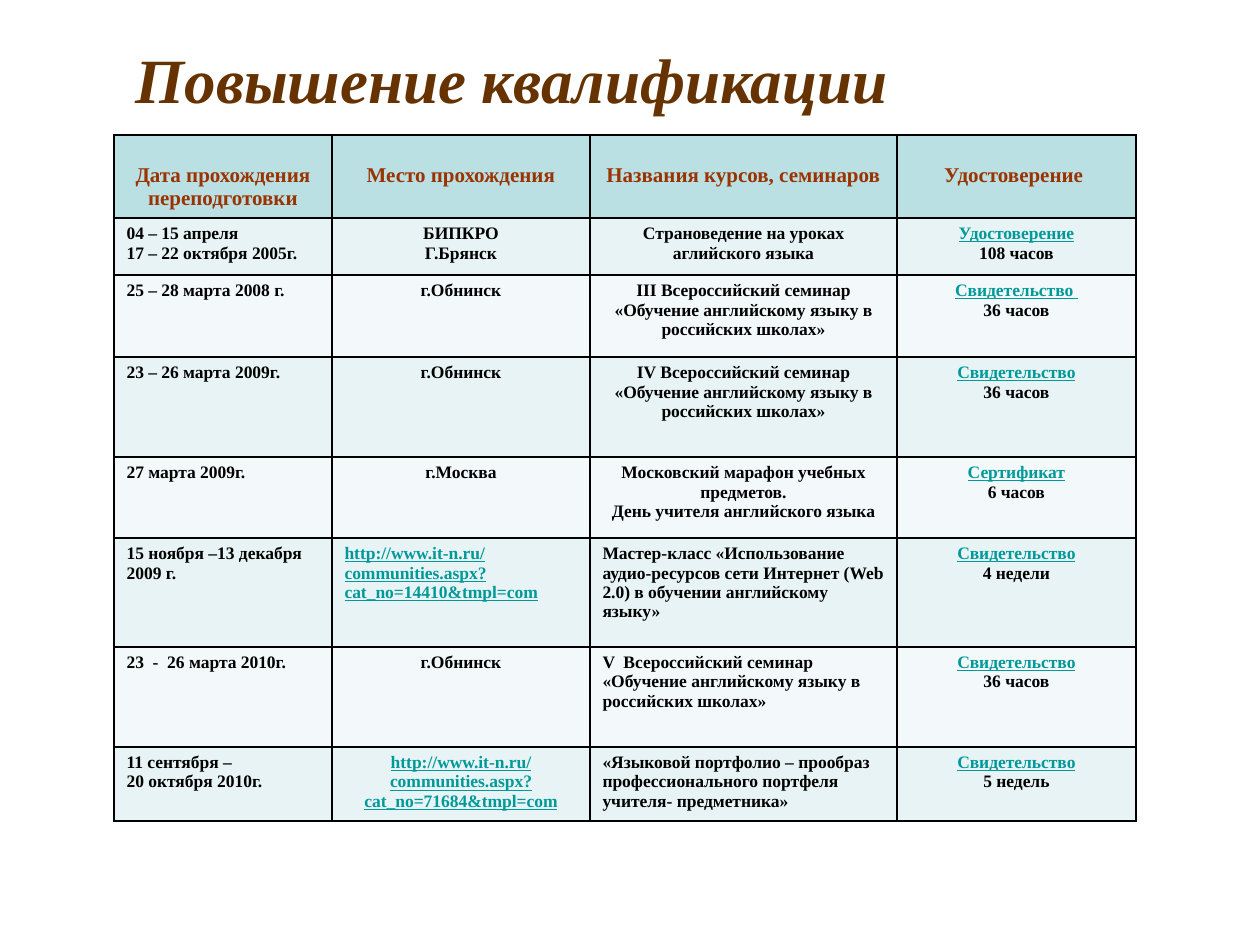
from lxml import etree
from pptx import Presentation
from pptx.dml.color import RGBColor
from pptx.enum import text
from pptx.oxml import ns
from pptx.util import Emu, Pt

PX = 914400 / 126
FONT = "Times New Roman"
HUE = {"title": "663300", "head": "993300", "ink": "000000", "link": "009999",
       "top": "BBE0E3", "odd": "E7F3F4", "even": "F3F9FA"}
LEFT, MID = text.PP_ALIGN.LEFT, text.PP_ALIGN.CENTER

COLS = [218, 258, 307, 239]
ROWS = [83, 57, 82, 100, 81, 109, 100, 74]
HEADS = ["Дата прохождения переподготовки", "Место прохождения",
         "Названия курсов, семинаров", "Удостоверение "]
CITY = "г.Обнинск"
SITE = "http://www.it-n.ru/communities.aspx?cat_no={}&tmpl=com"
TOPIC = "Всероссийский семинар «Обучение английскому языку в российских школах»"
PAPER = "Свидетельство"

# Dates, place, place alignment, course, course alignment, paper, length
DATA = [
    (["04 – 15 апреля", "17 – 22 октября 2005г."], ["БИПКРО", "Г.Брянск"], MID,
     ["Страноведение на уроках аглийского языка"], MID, "Удостоверение", "108 часов"),
    (["25 – 28 марта 2008 г."], [CITY], MID, ["III " + TOPIC], MID,
     PAPER + " ", "36 часов"),
    (["23 – 26 марта 2009г."], [CITY], MID, ["IV " + TOPIC], MID, PAPER, "36 часов"),
    (["27 марта 2009г."], ["г.Москва"], MID,
     ["Московский марафон учебных предметов.", "День учителя английского языка"], MID,
     "Сертификат", "6 часов"),
    (["15 ноября –13 декабря 2009 г."], [SITE.format(14410)], LEFT,
     ["Мастер-класс «Использование аудио-ресурсов сети Интернет (Web 2.0) "
      "в обучении английскому языку»"], LEFT, PAPER, "4 недели"),
    (["23  -  26 марта 2010г."], [CITY], MID, ["V  " + TOPIC], LEFT, PAPER, "36 часов"),
    (["11 сентября –", "20 октября 2010г."], [SITE.format(71684)], MID,
     ["«Языковой портфолио – прообраз профессионального портфеля "
      "учителя- предметника»"], LEFT, PAPER, "5 недель"),
]


def px(n):
    return Emu(round(n * PX))


def add_run(para, words, size, hue, line=False, slant=False):
    run = para.add_run()
    run.text = words
    font = run.font
    font.name, font.size, font.bold = FONT, Pt(size), True
    font.italic, font.underline = slant, line
    font.color.rgb = RGBColor.from_string(HUE[hue])


def add_edges(cell):
    props = cell._tc.get_or_add_tcPr()
    for side in ("lnL", "lnR", "lnT", "lnB"):
        line = etree.SubElement(props, ns.qn("a:" + side), w=str(Pt(1)))
        fill = etree.SubElement(line, ns.qn("a:solidFill"))
        etree.SubElement(fill, ns.qn("a:srgbClr"), val=HUE["ink"])


def fill_cell(cell, lines, align, size, back):
    """Write lines given as (words, hue) pairs; link lines are underlined."""
    add_edges(cell)
    cell.fill.solid()
    cell.fill.fore_color.rgb = RGBColor.from_string(HUE[back])
    frame = cell.text_frame
    for i, (words, hue) in enumerate(lines):
        para = frame.add_paragraph() if i else frame.paragraphs[0]
        para.alignment = align
        add_run(para, words, size, hue, line=hue == "link")


def tint(lines):
    return [(s, "link" if s.startswith("http") else "ink") for s in lines]


def add_title(slide, x, y, w, h):
    title = slide.shapes.title
    title.left, title.top, title.width, title.height = map(px, (x, y, w, h))
    frame = title.text_frame
    frame.word_wrap = True
    frame.auto_size = text.MSO_AUTO_SIZE.NONE
    frame.vertical_anchor = text.MSO_ANCHOR.MIDDLE
    para = frame.paragraphs[0]
    para.alignment = LEFT
    add_run(para, "Повышение квалификации", 36, "title", slant=True)


def add_grid(slide, x, y):
    box = map(px, (x, y, sum(COLS), sum(ROWS)))
    table = slide.shapes.add_table(len(ROWS), len(COLS), *box).table
    table.first_row = table.horz_banding = False
    for col, w in zip(table.columns, COLS):
        col.width = px(w)
    for row, h in zip(table.rows, ROWS):
        row.height = px(h)

    # Header row
    for c, words in enumerate(HEADS):
        cell = table.cell(0, c)
        fill_cell(cell, [(words, "head")], MID, 12, "top")
        cell.margin_top = px(29)

    # Course rows
    for r, (dates, place, pal, course, cal, paper, span) in enumerate(DATA, 1):
        parts = [(tint(dates), LEFT), (tint(place), pal), (tint(course), cal),
                 ([(paper, "link"), (span, "ink")], MID)]
        for c, (lines, align) in enumerate(parts):
            fill_cell(table.cell(r, c), lines, align, 10, "odd" if r % 2 else "even")


def main():
    deck = Presentation()
    deck.slide_width, deck.slide_height = px(1260), px(945)
    slide = deck.slides.add_slide(deck.slide_layouts[5])
    add_title(slide, 123, 36, 1023, 84)
    add_grid(slide, 114, 135)
    deck.save("out.pptx")


if __name__ == "__main__":
    main()
